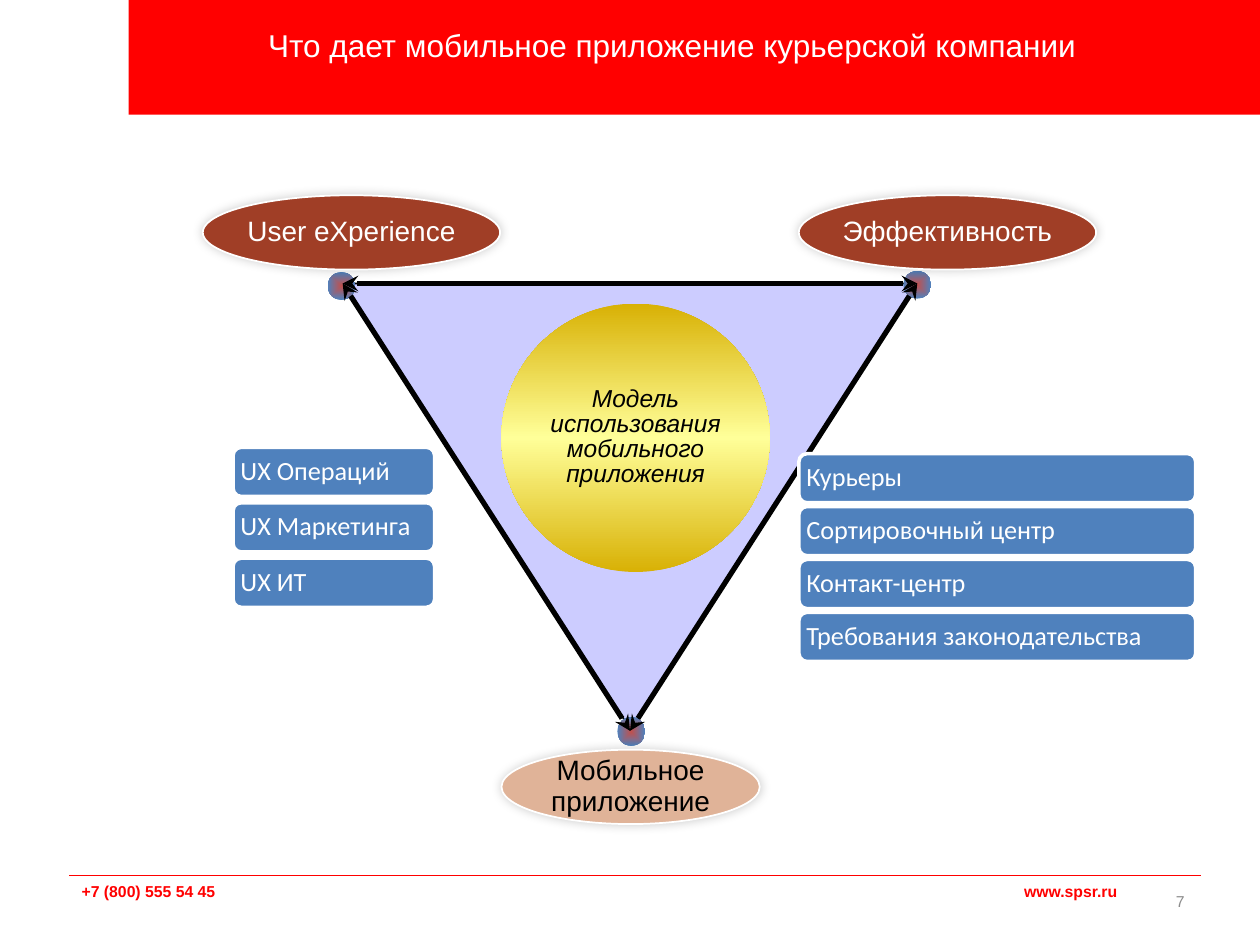
from pptx import Presentation
from pptx.dml.color import RGBColor
from pptx.enum.shapes import MSO_CONNECTOR, MSO_SHAPE
from pptx.enum.text import MSO_ANCHOR, PP_ALIGN
from pptx.oxml import parse_xml
from pptx.oxml.ns import nsdecls
from pptx.oxml.xmlchemy import OxmlElement
from pptx.util import Inches, Pt

presentation = Presentation()
presentation.slide_width, presentation.slide_height = Inches(10), Inches(7.5)
slide = presentation.slides.add_slide(presentation.slide_layouts[6])
rgb = RGBColor.from_string


def add_shape(kind, box, fill, line=None, width=1):
    shape = slide.shapes.add_shape(kind, *[Inches(value) for value in box])
    shape.shadow.inherit = False
    if fill:
        shape.fill.solid()
        shape.fill.fore_color.rgb = rgb(fill)
    if line:
        shape.line.color.rgb = rgb(line)
        shape.line.width = Pt(width)
    else:
        shape.line.fill.background()
    return shape


def write(shape, text, size, color, font="Arial", bold=False, italic=False, align=PP_ALIGN.LEFT,
          anchor=MSO_ANCHOR.MIDDLE, insets=(0.1, 0.05), spacing=1, tab=None):
    frame = shape.text_frame
    frame.word_wrap = True
    frame.vertical_anchor = anchor
    frame.margin_left = frame.margin_right = Inches(insets[0])
    frame.margin_top = frame.margin_bottom = Inches(insets[1])
    frame.text = text
    for paragraph in frame.paragraphs:
        paragraph.alignment = align
        paragraph.line_spacing = spacing
        if tab:
            tabs = OxmlElement("a:tabLst")
            stop = OxmlElement("a:tab")
            stop.set("pos", str(Inches(tab)))
            stop.set("algn", "l")
            tabs.append(stop)
            paragraph._p.get_or_add_pPr().append(tabs)
        for run in paragraph.runs:
            run.font.name = font
            run.font.size = Pt(size)
            run.font.bold = bold
            run.font.italic = italic
            run.font.color.rgb = rgb(color)


add_shape(MSO_SHAPE.RECTANGLE, (1.02, 0, 8.98, 0.91), "FF0000")

title = slide.shapes.add_textbox(Inches(2.03), Inches(0.16), Inches(7.97), Inches(0.47))
write(title, "Что дает мобильное приложение курьерской компании", 18, "FFFFFF", anchor=MSO_ANCHOR.TOP)
footer = slide.shapes.add_textbox(Inches(0.55), Inches(6.95), Inches(8.44), Inches(0.56))
write(footer, "+7 (800) 555 54 45\twww.spsr.ru", 9, "FF0000", bold=True, anchor=MSO_ANCHOR.TOP, tab=7.48)
page_number = slide.shapes.add_textbox(Inches(9.06), Inches(6.95), Inches(0.44), Inches(0.4))
write(page_number, "7", 9, "8C8C8C", align=PP_ALIGN.RIGHT)

triangle = add_shape(MSO_SHAPE.ISOSCELES_TRIANGLE, (2.72, 2.25, 4.57, 3.54), "CCCCFF", "000000")
triangle.rotation = 180

corner_gradient = ([(0, "C0504D"), (100, "4F81BD")],
                   '<a:path path="shape"><a:fillToRect l="50000" t="50000" r="50000" b="50000"/></a:path>')
gold_gradient = ([(0, "D8B105"), (50, "FFFF99"), (100, "D8B105")], '<a:lin ang="5400000" scaled="0"/>')
circles = []
for box, (stops, direction) in [
    ((4.9, 5.69, 0.22, 0.23), corner_gradient),
    ((2.6, 2.16, 0.22, 0.22), corner_gradient),
    ((7.17, 2.15, 0.22, 0.22), corner_gradient),
    ((3.98, 2.41, 2.13, 2.13), gold_gradient),
]:
    circle = add_shape(MSO_SHAPE.OVAL, box, None)
    stop_list = "".join(f'<a:gs pos="{place * 1000}"><a:srgbClr val="{color}"/></a:gs>' for place, color in stops)
    gradient = f'<a:gradFill {nsdecls("a")} rotWithShape="1"><a:gsLst>{stop_list}</a:gsLst>{direction}</a:gradFill>'
    circle._element.spPr.insert(2, parse_xml(gradient))
    circles.append(circle)
write(circles[-1], "Модель\nиспользования мобильного приложения", 14, "000000", italic=True,
      align=PP_ALIGN.CENTER, insets=(0, 0.04), spacing=0.85)

for text, box, fill, color in [
    ("User eXperience", (1.61, 1.55, 2.36, 0.59), "A03E26", "FFFFFF"),
    ("Эффективность", (6.34, 1.55, 2.36, 0.59), "A03E26", "FFFFFF"),
    ("Мобильное приложение", (3.98, 5.95, 2.05, 0.59), "E0B398", "000000"),
]:
    ellipse = add_shape(MSO_SHAPE.OVAL, box, fill, "FFFFFF")
    shadow = (f'<a:outerShdw {nsdecls("a")} blurRad="{Pt(6)}" dist="0" dir="0" rotWithShape="0">'
              '<a:srgbClr val="000000"><a:alpha val="20000"/></a:srgbClr></a:outerShdw>')
    ellipse._element.spPr.find("{*}effectLst").append(parse_xml(shadow))
    write(ellipse, text, 16, color, align=PP_ALIGN.CENTER, insets=(0, 0), spacing=0.9)

left_corner, right_corner, bottom_corner = (2.72, 2.25), (7.28, 2.25), (5, 5.8)
for start, end, color, width, arrows in [
    ((0.55, 6.95), (9.53, 6.95), "FF0000", 0.5, False),
    (left_corner, bottom_corner, "000000", 3, True),
    (left_corner, right_corner, "000000", 3, True),
    (bottom_corner, right_corner, "000000", 3, True),
]:
    connector = slide.shapes.add_connector(MSO_CONNECTOR.STRAIGHT, *[Inches(value) for value in start + end])
    connector.line.color.rgb = rgb(color)
    connector.line.width = Pt(width)
    if arrows:
        for tag in ("a:headEnd", "a:tailEnd"):
            arrow = OxmlElement(tag)
            arrow.set("type", "stealth")
            connector.line._get_or_add_ln().append(arrow)
    connector._element.spPr.append(OxmlElement("a:effectLst"))

for left, top, width, step, labels in [
    (1.85, 3.55, 1.6, 0.44, ["UX Операций", "UX Маркетинга", "UX ИТ"]),
    (6.34, 3.6, 3.15, 0.42, ["Курьеры", "Сортировочный центр", "Контакт-центр", "Требования законодательства"]),
]:
    for index, label in enumerate(labels):
        box = (left, top + index * step, width, 0.39)
        item = add_shape(MSO_SHAPE.ROUNDED_RECTANGLE, box, "4F81BD", "FFFFFF", 2)
        write(item, label, 15, "FFFFFF", font="Calibri", insets=(0.04, 0.04), spacing=0.9)

presentation.save("out.pptx")
